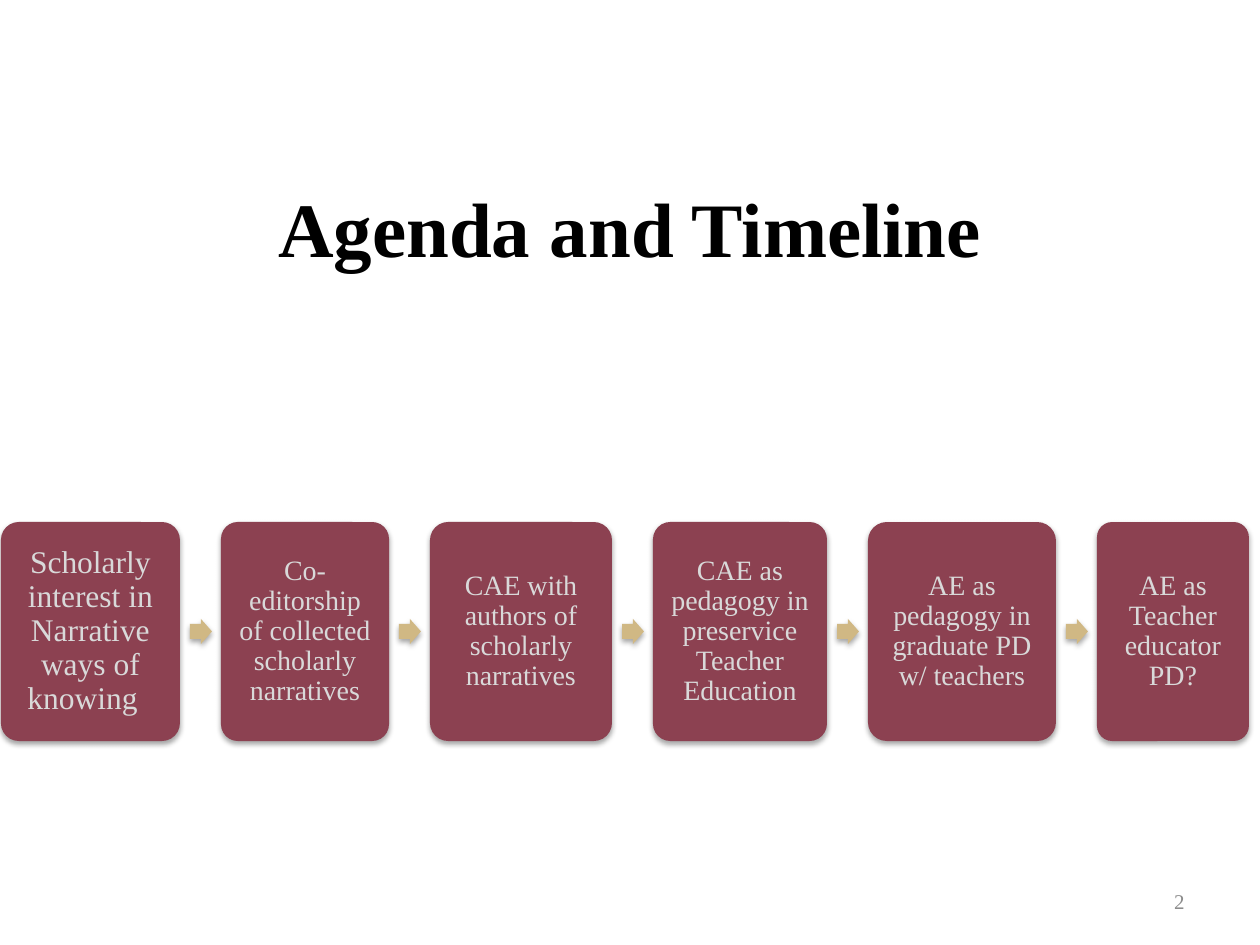
from lxml.etree import SubElement
from pptx import Presentation
from pptx.dml.color import RGBColor
from pptx.enum.shapes import MSO_SHAPE
from pptx.enum.text import MSO_ANCHOR, PP_ALIGN
from pptx.oxml.ns import qn
from pptx.util import Emu, Pt

SCALE = 914400 / 126
FONT = "Times New Roman"
COLORS = {
    "title": "000000",
    "step": "8C4151",
    "step_text": "D9D9D9",
    "arrow": "D0B884",
    "number": "8C8C8C",
    "shadow": "000000",
}
STEPS = [
    ("Scholarly interest in Narrative ways of knowing\t", 179, 18),
    ("Co-editorship of collected scholarly narratives", 168, 16),
    ("CAE with authors of scholarly narratives", 182, 16),
    ("CAE as pedagogy in preservice Teacher Education", 174, 16),
    ("AE as pedagogy in graduate PD w/ teachers", 188, 16),
    ("AE as Teacher educator PD?", 152, 16),
]


def px(n):
    return Emu(round(n * SCALE))


def write(tf, text, size, color, bold=False, align=PP_ALIGN.CENTER, spacing=None, inset=None):
    tf.word_wrap = True
    tf.vertical_anchor = MSO_ANCHOR.MIDDLE
    if inset is not None:
        tf.margin_left = tf.margin_right = tf.margin_top = tf.margin_bottom = px(inset)
    p = tf.paragraphs[0]
    p.alignment = align
    if spacing:
        p.line_spacing = spacing
    r = p.add_run()
    r.text = text
    r.font.name = FONT
    r.font.size = Pt(size)
    r.font.bold = bold
    r.font.color.rgb = RGBColor.from_string(COLORS[color])


class Deck:
    def __init__(self, prs):
        self.s = prs.slides.add_slide(prs.slide_layouts[5])

    def title(self, x, y, w, h, text):
        sp = self.s.shapes.title
        sp.left, sp.top, sp.width, sp.height = map(px, (x, y, w, h))
        write(sp.text_frame, text, 44, "title", bold=True)

    def shape(self, kind, x, y, w, h, color, adjustments):
        sp = self.s.shapes.add_shape(kind, *map(px, (x, y, w, h)))
        for i, value in enumerate(adjustments):
            sp.adjustments[i] = value
        sp.fill.solid()
        sp.fill.fore_color.rgb = RGBColor.from_string(COLORS[color])
        sp.line.fill.background()
        self.shadow(sp)
        return sp

    def shadow(self, sp):
        sp.shadow.inherit = False
        effects = sp._element.spPr.find(qn("a:effectLst"))
        outer = SubElement(effects, qn("a:outerShdw"), blurRad=str(Pt(3.1)),
                           dist=str(Pt(1.8)), dir="5400000", rotWithShape="0")
        rgb = SubElement(outer, qn("a:srgbClr"), val=COLORS["shadow"])
        SubElement(rgb, qn("a:alpha"), val="35000")

    def step(self, x, y, w, h, text, size):
        sp = self.shape(MSO_SHAPE.ROUNDED_RECTANGLE, x, y, w, h, "step", [0.1])
        write(sp.text_frame, text, size, "step_text", spacing=0.9, inset=9)

    def arrow(self, x, y, w, h):
        self.shape(MSO_SHAPE.RIGHT_ARROW, x, y, w, h, "arrow", [0.6, 0.5])

    def number(self, x, y, w, h, text):
        sp = self.s.shapes.add_textbox(*map(px, (x, y, w, h)))
        write(sp.text_frame, text, 12, "number", align=PP_ALIGN.RIGHT)


def main():
    prs = Presentation()
    prs.slide_width, prs.slide_height = px(1260), px(945)
    deck = Deck(prs)
    deck.title(63, 160, 1134, 134, "Agenda and Timeline")
    x, gap = 1, 41
    for i, (text, width, size) in enumerate(STEPS):
        if i:
            deck.arrow(x - gap + 10, 619, 22, 25)
        deck.step(x, 522, width, 219, text, size)
        x += width + gap
    deck.number(903, 876, 294, 50, "2")
    prs.save("out.pptx")


if __name__ == "__main__":
    main()
